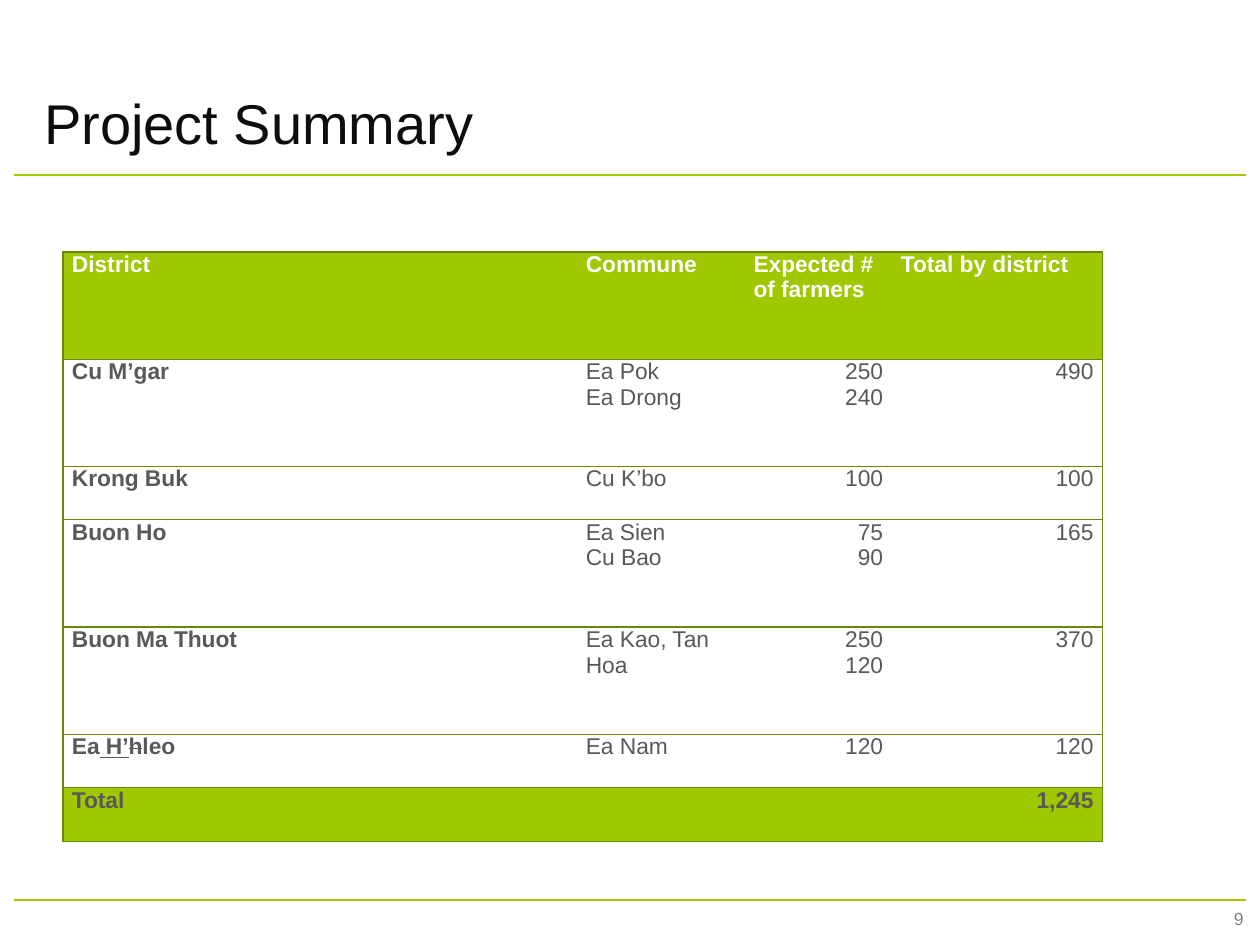
from dataclasses import dataclass

from lxml import etree
from pptx import Presentation
from pptx.dml.color import RGBColor
from pptx.enum.shapes import MSO_CONNECTOR
from pptx.enum.text import MSO_ANCHOR, PP_ALIGN
from pptx.oxml.ns import qn
from pptx.util import Cm, Pt

STRAIGHT = MSO_CONNECTOR.STRAIGHT
LEFT, RIGHT = PP_ALIGN.LEFT, PP_ALIGN.RIGHT
MIDDLE, BOTTOM = MSO_ANCHOR.MIDDLE, MSO_ANCHOR.BOTTOM
FONT = "Arial"
HEX = {"lime": "A0C800", "edge": "688711", "white": "FFFFFF",
       "body": "595959", "title": "0D0D0D", "number": "828282"}
WIDTHS = (10.36, 3.38, 2.97, 4.24)
TALL, SHORT = 2.16, 1.08


@dataclass
class Part:
    text: str
    under: bool = False
    strike: bool = False


@dataclass
class Row:
    height: float
    name: list[Part]
    commune: list[str]
    farmers: list[str]
    total: str
    ink: str = "body"
    fill: str = ""


@dataclass
class Label:
    box: tuple[float, float, float, float]
    inset: tuple[float, float, float, float]
    text: str
    size: float
    ink: str
    align: PP_ALIGN
    anchor: MSO_ANCHOR
    space: float = 1


ROWS = [
    Row(TALL, [Part("District")], ["Commune"], ["Expected # of farmers"],
        "Total by district", "white", "lime"),
    Row(TALL, [Part("Cu M’gar")], ["Ea Pok", "Ea Drong"], ["250", "240"], "490"),
    Row(SHORT, [Part("Krong Buk")], ["Cu K’bo"], ["100"], "100"),
    Row(TALL, [Part("Buon Ho")], ["Ea Sien", "Cu Bao"], ["75", "90"], "165"),
    Row(TALL, [Part("Buon Ma Thuot")], ["Ea Kao, Tan Hoa"], ["250", "120"], "370"),
    Row(SHORT, [Part("Ea"), Part(" H’", under=True), Part("h", strike=True),
                Part("leo")], ["Ea Nam"], ["120"], "120"),
    Row(SHORT, [Part("Total")], [], [], "1,245", fill="lime"),
]
LABELS = [
    Label((0.89, 0.13, 23.6, 3.02), (0, 0, 0, 0), "Project Summary", 32,
          "title", LEFT, BOTTOM),
    Label((23.88, 17.91, 1.19, 1.02), (0.25, 0.13, 0, 0.13), "9", 10,
          "number", RIGHT, MIDDLE, 1.5),
]


def paint(name: str) -> RGBColor:
    """Return the named colour."""
    return RGBColor.from_string(HEX[name])


def write(para, part: Part, size: float, ink: str, bold: bool = False) -> None:
    """Add one styled run to a paragraph."""
    run = para.add_run()
    run.text = part.text
    font = run.font
    font.name, font.size, font.bold = FONT, Pt(size), bold
    font.color.rgb = paint(ink)
    if part.under:
        font.underline = True
    if part.strike:
        run._r.get_or_add_rPr().set("strike", "sngStrike")


def pad(box, inset: tuple[float, float, float, float]) -> None:
    """Set the margins of a cell or text frame."""
    (box.margin_left, box.margin_top,
     box.margin_right, box.margin_bottom) = map(Cm, inset)


def label(slide, item: Label) -> None:
    """Draw a text box holding one run."""
    frame = slide.shapes.add_textbox(*map(Cm, item.box)).text_frame
    frame.word_wrap = True
    frame.vertical_anchor = item.anchor
    pad(frame, item.inset)
    para = frame.paragraphs[0]
    para.alignment, para.line_spacing = item.align, item.space
    write(para, Part(item.text), item.size, item.ink)


def rule(slide, top: float) -> None:
    """Draw a rule across the slide."""
    line = slide.shapes.add_connector(STRAIGHT, Cm(0.28), Cm(top), Cm(25.12), Cm(top))
    line.line.color.rgb = paint("lime")
    line.line.width = Pt(1)
    etree.SubElement(line._element.spPr, qn("a:effectLst"))


def edge(cell, sides: str) -> None:
    """Line the given sides of a cell and clear the others."""
    props = cell._tc.get_or_add_tcPr()
    for side in "LRTB":
        line = etree.SubElement(props, qn(f"a:ln{side}"), w=str(Pt(0.75)))
        if side in sides:
            fill = etree.SubElement(line, qn("a:solidFill"))
            etree.SubElement(fill, qn("a:srgbClr"), val=HEX["edge"])
        else:
            etree.SubElement(line, qn("a:noFill"))


def fill_cell(cell, lines: list[list[Part]], row: Row, align: PP_ALIGN,
              bold: bool, sides: str) -> None:
    """Style a cell and write its lines."""
    pad(cell, (0.18, 0, 0.18, 0))
    edge(cell, sides)
    if row.fill:
        cell.fill.solid()
        cell.fill.fore_color.rgb = paint(row.fill)
    else:
        cell.fill.background()
    frame = cell.text_frame
    for spot, parts in enumerate(lines):
        para = frame.add_paragraph() if spot else frame.paragraphs[0]
        para.alignment = align
        for part in parts:
            write(para, part, 13, row.ink, bold)


def grid(slide) -> None:
    """Draw the table of districts."""
    table = slide.shapes.add_table(
        len(ROWS), len(WIDTHS), Cm(1.27), Cm(5.08), Cm(sum(WIDTHS)),
        Cm(sum(row.height for row in ROWS))).table
    table.first_row = table.horz_banding = False
    for col, width in zip(table.columns, WIDTHS):
        col.width = Cm(width)
    for y, row in enumerate(ROWS):
        table.rows[y].height = Cm(row.height)
        plain = (row.commune, row.farmers, [row.total])
        cells = [[row.name]] + [[[Part(text)] for text in texts] for texts in plain]
        for x, lines in enumerate(cells):
            align = RIGHT if y and x > 1 else LEFT
            bold = x == 0 or bool(row.fill)
            sides = "TB" + {0: "L", len(WIDTHS) - 1: "R"}.get(x, "")
            fill_cell(table.cell(y, x), lines, row, align, bold, sides)


def main() -> None:
    """Build and save the slide."""
    deck = Presentation()
    deck.slide_width, deck.slide_height = Cm(25.4), Cm(19.05)
    slide = deck.slides.add_slide(deck.slide_layouts[6])
    for top in (3.53, 18.14):
        rule(slide, top)
    for item in LABELS:
        label(slide, item)
    grid(slide)
    deck.save("out.pptx")


if __name__ == "__main__":
    main()
